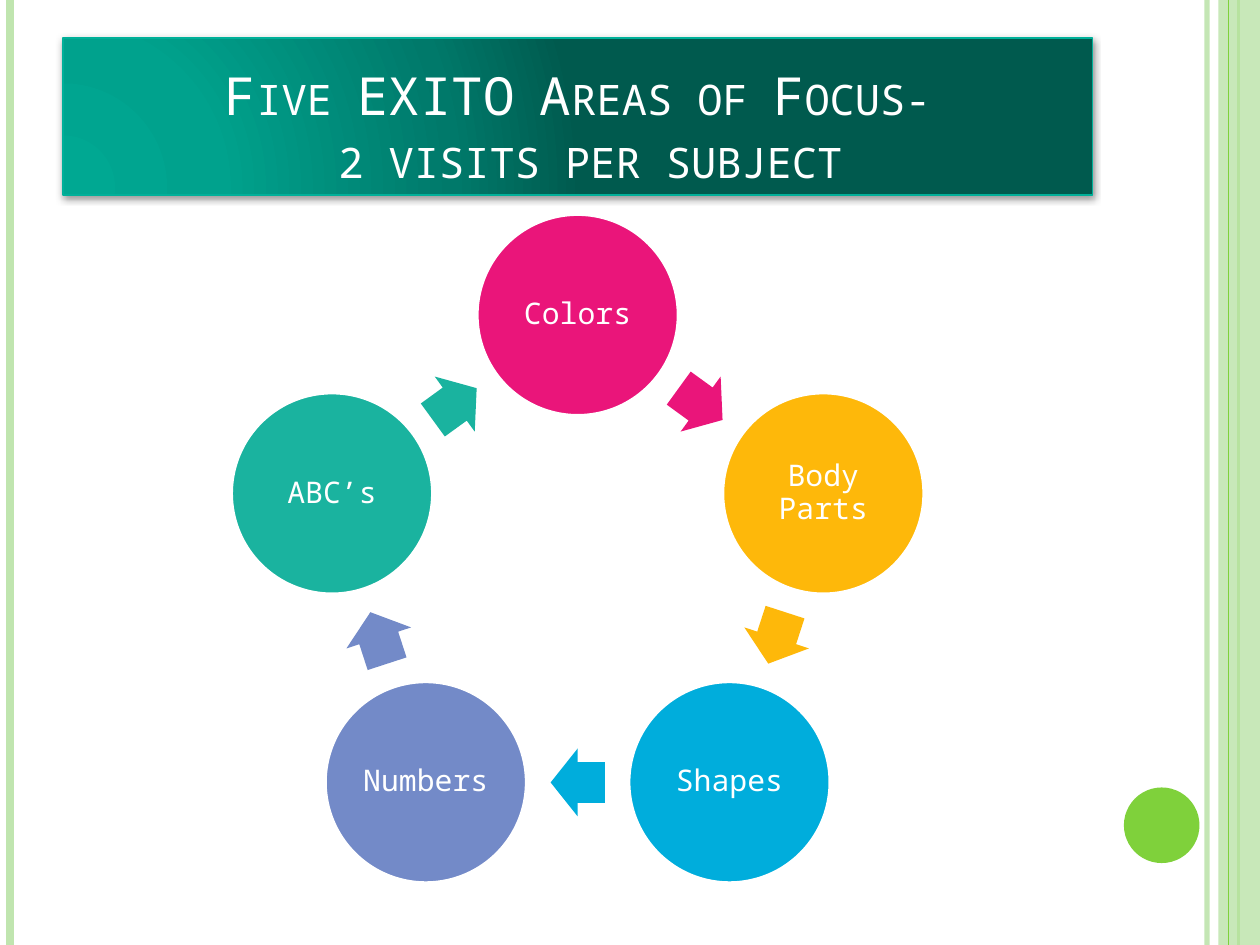
from math import cos, radians, sin

from lxml import etree
from pptx import Presentation
from pptx.dml.color import RGBColor
from pptx.enum.shapes import MSO_CONNECTOR, MSO_SHAPE
from pptx.enum.text import MSO_ANCHOR, PP_ALIGN
from pptx.oxml import parse_xml
from pptx.oxml.ns import nsdecls, qn
from pptx.util import Inches, Pt

FONT = "Noto Sans Mono"
COLORS = {
    "white": "FFFFFF",
    "pale": "C0E5AF",
    "green": "7FD13B",
    "border": "00B099",
    "pink": "EA157A",
    "amber": "FEB80A",
    "blue": "00ADDC",
    "violet": "738AC8",
    "teal": "1AB39F",
}
BANNER_STOPS = [(0, "00A892"), (30, "00A28D"), (75, "00796A"), (100, "005A4E")]
FOCUS_AREAS = [
    ("Colors", "pink"),
    ("Body Parts", "amber"),
    ("Shapes", "blue"),
    ("Numbers", "violet"),
    ("ABC’s", "teal"),
]


def rgb(name):
    """Return a palette colour."""
    return RGBColor.from_string(COLORS[name])


def set_alpha(element, percent):
    """Make the solid colour inside an element partly transparent."""
    color = element.find(".//" + qn("a:srgbClr"))
    etree.SubElement(color, qn("a:alpha"), val=str(percent * 1000))


def add_filled_shape(slide, kind, left, top, width, height, color):
    """Add a flat preset shape without an outline."""
    shape = slide.shapes.add_shape(
        kind, Inches(left), Inches(top), Inches(width), Inches(height)
    )
    shape.shadow.inherit = False
    shape.fill.solid()
    shape.fill.fore_color.rgb = rgb(color)
    shape.line.fill.background()
    return shape


def add_rule(slide, x, height, color, weight):
    """Add a vertical rule from the top of the slide."""
    rule = slide.shapes.add_connector(
        MSO_CONNECTOR.STRAIGHT, Inches(x), Inches(0), Inches(x), Inches(height)
    )
    rule.line.color.rgb = rgb(color)
    rule.line.width = Pt(weight)
    etree.SubElement(rule._element.spPr, qn("a:effectLst"))
    return rule


def add_frame(slide, width, height):
    """Draw the edge stripes and the corner dot."""
    inner_rule = add_rule(slide, width - 0.42, height, "pale", 3)
    set_alpha(inner_rule._element.spPr, 93)
    add_rule(slide, 0.08, height, "pale", 4.5)
    add_rule(slide, width - 0.17, height, "green", 1.5)
    band = add_filled_shape(
        slide, MSO_SHAPE.RECTANGLE, width - 0.33, 0, 0.33, height, "pale"
    )
    set_alpha(band._element.spPr, 87)
    add_rule(slide, width - 0.25, height, "green", 0.75)
    add_filled_shape(
        slide, MSO_SHAPE.OVAL, width - 1.08, height - 1.25, 0.6, 0.6, "green"
    )


def add_run(paragraph, text, size):
    """Add a white run in the slide font."""
    run = paragraph.add_run()
    run.text = text
    run.font.name = FONT
    run.font.size = Pt(size)
    run.font.color.rgb = rgb("white")
    return run


def style_banner(title):
    """Give the title its radial gradient, border and shadow."""
    title.line.color.rgb = rgb("border")
    title.line.width = Pt(1)
    stops = "".join(
        f'<a:gs pos="{position * 1000}"><a:srgbClr val="{color}"/></a:gs>'
        for position, color in BANNER_STOPS
    )
    gradient = parse_xml(
        f'<a:gradFill {nsdecls("a")} rotWithShape="1"><a:gsLst>{stops}</a:gsLst>'
        '<a:path path="circle"><a:fillToRect l="5000" t="100000" r="120000" b="10000"/>'
        "</a:path></a:gradFill>"
    )
    shadow = parse_xml(
        f'<a:effectLst {nsdecls("a")}><a:outerShdw blurRad="{Pt(4)}" dist="{Pt(1.6)}" '
        'dir="5400000" algn="ctr" rotWithShape="0"><a:srgbClr val="000000">'
        '<a:alpha val="42000"/></a:srgbClr></a:outerShdw></a:effectLst>'
    )
    properties = title._element.spPr
    properties.find(qn("a:ln")).addprevious(gradient)
    properties.append(shadow)


def add_title(slide, left, top, width, height):
    """Place and format the title banner."""
    title = slide.shapes.title
    title.left, title.top = Inches(left), Inches(top)
    title.width, title.height = Inches(width), Inches(height)
    style_banner(title)
    frame = title.text_frame
    frame.word_wrap = True
    frame.vertical_anchor = MSO_ANCHOR.BOTTOM
    paragraph = frame.paragraphs[0]
    paragraph.alignment = PP_ALIGN.CENTER
    paragraph.line_spacing = 1.0
    lines = ["Five EXITO Areas of Focus-", " 2 visits per subject"]
    for index, line in enumerate(lines):
        if index:
            paragraph.add_line_break()
        run = add_run(paragraph, line, 30)
        run.font._element.set("cap", "small")


def add_cycle(slide, left, top, width):
    """Draw the ring of focus areas, with an arrow from each to the next."""
    diameter, radius, arrow_radius = 1.6, 2.05, 1.66
    arrow_width, arrow_height = 0.43, 0.54
    center_x = left + width / 2
    center_y = top + diameter / 2 + radius
    step = 360 / len(FOCUS_AREAS)

    def corner(angle, distance, part_width, part_height):
        """Return the left and top of a part centred on the ring."""
        return (
            center_x + distance * sin(radians(angle)) - part_width / 2,
            center_y - distance * cos(radians(angle)) - part_height / 2,
        )

    for index, (label, color) in enumerate(FOCUS_AREAS):
        angle = index * step
        x, y = corner(angle, radius, diameter, diameter)
        circle = add_filled_shape(
            slide, MSO_SHAPE.OVAL, x, y, diameter, diameter, color
        )
        circle.line.color.rgb = rgb("white")
        circle.line.width = Pt(2)
        frame = circle.text_frame
        frame.word_wrap = True
        frame.vertical_anchor = MSO_ANCHOR.MIDDLE
        frame.margin_left = frame.margin_right = Inches(0.02)
        frame.margin_top = frame.margin_bottom = Inches(0.02)
        paragraph = frame.paragraphs[0]
        paragraph.alignment = PP_ALIGN.CENTER
        paragraph.line_spacing = 0.9
        add_run(paragraph, label, 17)

        arrow_angle = angle + step / 2
        x, y = corner(arrow_angle, arrow_radius, arrow_width, arrow_height)
        arrow = add_filled_shape(
            slide, MSO_SHAPE.RIGHT_ARROW, x, y, arrow_width, arrow_height, color
        )
        arrow.adjustments[0] = 0.6
        arrow.adjustments[1] = 0.5
        arrow.rotation = arrow_angle


def main():
    """Build and save the slide."""
    presentation = Presentation()
    presentation.slide_width, presentation.slide_height = Inches(10), Inches(7.5)
    slide = presentation.slides.add_slide(presentation.slide_layouts[5])
    add_frame(slide, 10, 7.5)
    add_title(slide, 0.5, 0.3, 8.17, 1.25)
    add_cycle(slide, 0.5, 1.7, 8.17)
    presentation.save("out.pptx")


if __name__ == "__main__":
    main()
